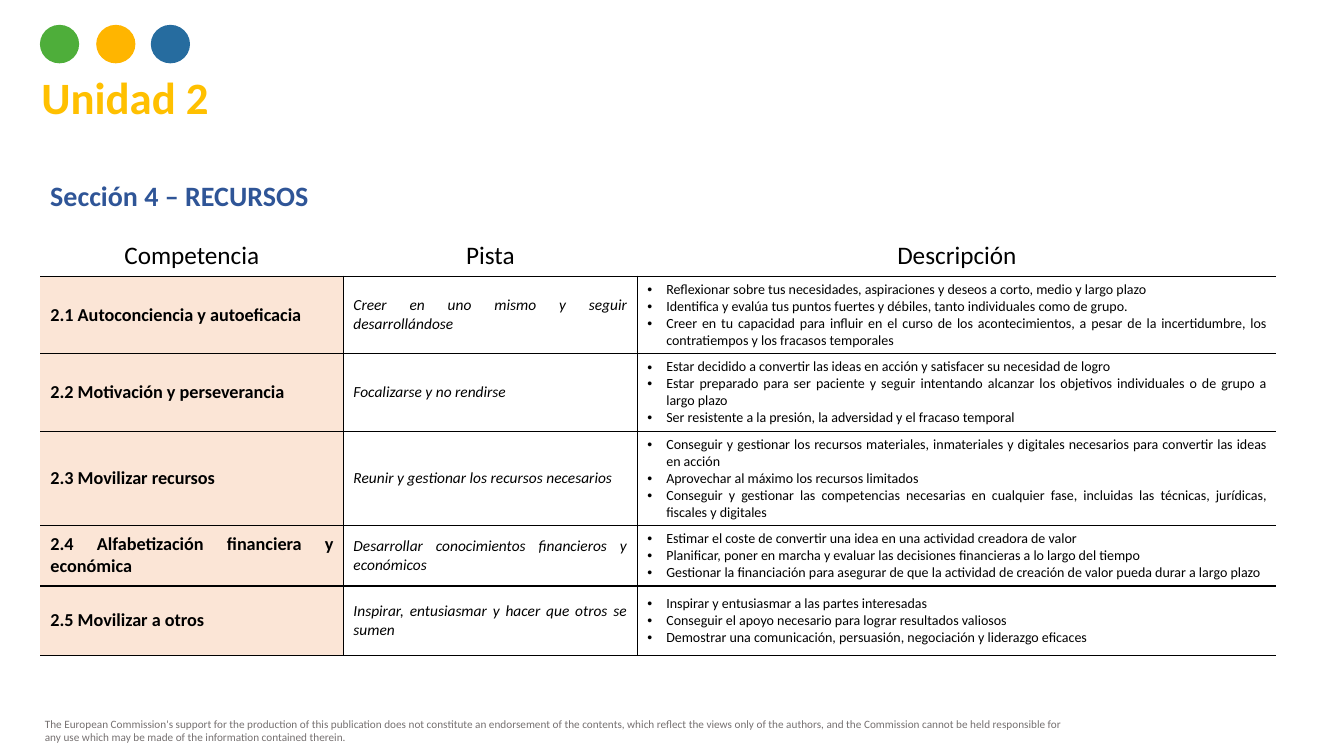
"""Builds the Unidad 2 resources slide with its competence table."""
from lxml import etree
from pptx import Presentation
from pptx import util as u
from pptx.dml import color
from pptx.enum import shapes, text
from pptx.oxml import ns

FOOTER = ("The European Commission's support for the production of this publication does not "
          "constitute an endorsement of the contents, which reflect the views only of the authors, "
          "and the Commission cannot be held responsible for any use which may be made of the "
          "information contained therein.")
HEADINGS = ["Competencia", "Pista", "Descripción"]
COMPETENCES = [
    ("2.1 Autoconciencia y autoeficacia", "Creer en uno mismo y seguir desarrollándose", [
        "Reflexionar sobre tus necesidades, aspiraciones y deseos a corto, medio y largo plazo",
        "Identifica y evalúa tus puntos fuertes y débiles, tanto individuales como de grupo.",
        "Creer en tu capacidad para influir en el curso de los acontecimientos, a pesar de la "
        "incertidumbre, los contratiempos y los fracasos temporales"]),
    ("2.2 Motivación y perseverancia", "Focalizarse y no rendirse", [
        "Estar decidido a convertir las ideas en acción y satisfacer su necesidad de logro",
        "Estar preparado para ser paciente y seguir intentando alcanzar los objetivos "
        "individuales o de grupo a largo plazo",
        "Ser resistente a la presión, la adversidad y el fracaso temporal"]),
    ("2.3 Movilizar recursos", "Reunir y gestionar los recursos necesarios", [
        "Conseguir y gestionar los recursos materiales, inmateriales y digitales necesarios "
        "para convertir las ideas en acción",
        "Aprovechar al máximo los recursos limitados",
        "Conseguir y gestionar las competencias necesarias en cualquier fase, incluidas las "
        "técnicas, jurídicas, fiscales y digitales"]),
    ("2.4 Alfabetización financiera y económica",
     "Desarrollar conocimientos financieros y económicos", [
         "Estimar el coste de convertir una idea en una actividad creadora de valor",
         "Planificar, poner en marcha y evaluar las decisiones financieras a lo largo del tiempo",
         "Gestionar la financiación para asegurar de que la actividad de creación de valor "
         "pueda durar a largo plazo"]),
    ("2.5 Movilizar a otros", "Inspirar, entusiasmar y hacer que otros se sumen", [
        "Inspirar y entusiasmar a las partes interesadas",
        "Conseguir el apoyo necesario para lograr resultados valiosos",
        "Demostrar una comunicación, persuasión, negociación y liderazgo eficaces"]),
]
COLUMN_WIDTHS = [216.5, 210, 456.5]
ROW_HEIGHTS = [19.5, 47.5, 40.3, 37.4, 31, 49.7]
COLUMN_STYLES = [{"size": 13, "bold": True}, {"size": 11, "italic": True}, {"size": 10}]
PLAIN_TABLE = "{2D5ABB26-0587-4C30-8999-92F81FD0307C}"
LEFT, CENTER, JUSTIFY = text.PP_ALIGN.LEFT, text.PP_ALIGN.CENTER, text.PP_ALIGN.JUSTIFY


def rgb(value):
    return color.RGBColor.from_string(value)


class Slide:
    def __init__(self, page):
        self.page = page
        self.font = "Calibri"
        self.ink = "000000"
        self.tint = "FBE5D6"

    def fill_text(self, frame, lines, align=LEFT, bullet=False, ink=None, size=18, **style):
        for index, line in enumerate(lines):
            para = frame.paragraphs[0] if index == 0 else frame.add_paragraph()
            para.alignment = align
            if bullet:
                self.add_bullet(para)
            span = para.add_run()
            span.text = line
            values = {"name": self.font, "size": u.Pt(size), **style}
            for name, value in values.items():
                setattr(span.font, name, value)
            span.font.color.rgb = rgb(ink or self.ink)

    def add_bullet(self, para):
        props = para._p.get_or_add_pPr()
        props.set("marL", str(u.Pt(13.5)))
        props.set("indent", str(-u.Pt(13.5)))
        etree.SubElement(props, ns.qn("a:buFont"), typeface="Arial")
        etree.SubElement(props, ns.qn("a:buChar"), char="•")

    def add_text(self, left, top, width, height, line, **style):
        box = self.page.shapes.add_textbox(*map(u.Pt, (left, top, width, height)))
        box.text_frame.word_wrap = True
        box.text_frame.auto_size = text.MSO_AUTO_SIZE.SHAPE_TO_FIT_TEXT
        self.fill_text(box.text_frame, [line], **style)

    def add_dots(self, top, width, height, dots):
        group = self.page.shapes.add_group_shape()
        for left, fill in dots:
            dot = group.shapes.add_shape(
                shapes.MSO_SHAPE.OVAL, *map(u.Pt, (left, top, width, height)))
            dot.rotation = 270
            dot.shadow.inherit = False
            dot.fill.solid()
            dot.fill.fore_color.rgb = rgb(fill)
            dot.line.fill.background()

    def add_border(self, cell, side):
        line = etree.SubElement(cell._tc.get_or_add_tcPr(), ns.qn("a:ln" + side),
                                w=str(u.Pt(1)))
        fill = etree.SubElement(line, ns.qn("a:solidFill"))
        etree.SubElement(fill, ns.qn("a:srgbClr"), val=self.ink)

    def style_cell(self, cell, sides, fill=None):
        cell.vertical_anchor = text.MSO_ANCHOR.MIDDLE
        for side in sides:
            self.add_border(cell, side)
        if fill:
            cell.fill.solid()
            cell.fill.fore_color.rgb = rgb(fill)
        else:
            cell.fill.background()

    def add_table(self, left, top, widths, heights, headings, rows):
        table = self.page.shapes.add_table(
            len(heights), len(widths),
            *map(u.Pt, (left, top, sum(widths), sum(heights)))).table
        table.first_row = table.horz_banding = False
        table._tbl.tblPr[0].text = PLAIN_TABLE
        for column, width in zip(table.columns, widths):
            column.width = u.Pt(width)
        for row, height in zip(table.rows, heights):
            row.height = u.Pt(height)
        for x, heading in enumerate(headings):
            cell = table.cell(0, x)
            self.style_cell(cell, "B")
            self.fill_text(cell.text_frame, [heading], align=CENTER)
        for y, (competence, hint, points) in enumerate(rows, 1):
            for x, lines in enumerate([[competence], [hint], points]):
                cell = table.cell(y, x)
                self.style_cell(cell, ["RTB", "LTB", "TB"][x], self.tint if x == 0 else None)
                self.fill_text(cell.text_frame, lines, align=JUSTIFY, bullet=x == 2,
                               **COLUMN_STYLES[x])


def main():
    deck = Presentation()
    deck.slide_width, deck.slide_height = u.Pt(960), u.Pt(540)
    slide = Slide(deck.slides.add_slide(deck.slide_layouts[6]))
    slide.add_text(25, 508.5, 753, 26.5, FOOTER, size=8, ink="767171")
    slide.add_text(22.5, 46.5, 142.5, 46, "Unidad 2", size=32, bold=True, ink="FFC000")
    slide.add_text(28.8, 124, 883, 31.5, "Sección 4 – RECURSOS", align=JUSTIFY,
                   size=20, bold=True, ink="2F5597")
    slide.add_dots(17.5, 27.5, 28, [(28.8, "4EAE3A"), (69, "FFB500"), (108, "266C9F")])
    slide.add_table(28.8, 168.5, COLUMN_WIDTHS, ROW_HEIGHTS, HEADINGS, COMPETENCES)
    deck.save("out.pptx")


if __name__ == "__main__":
    main()
